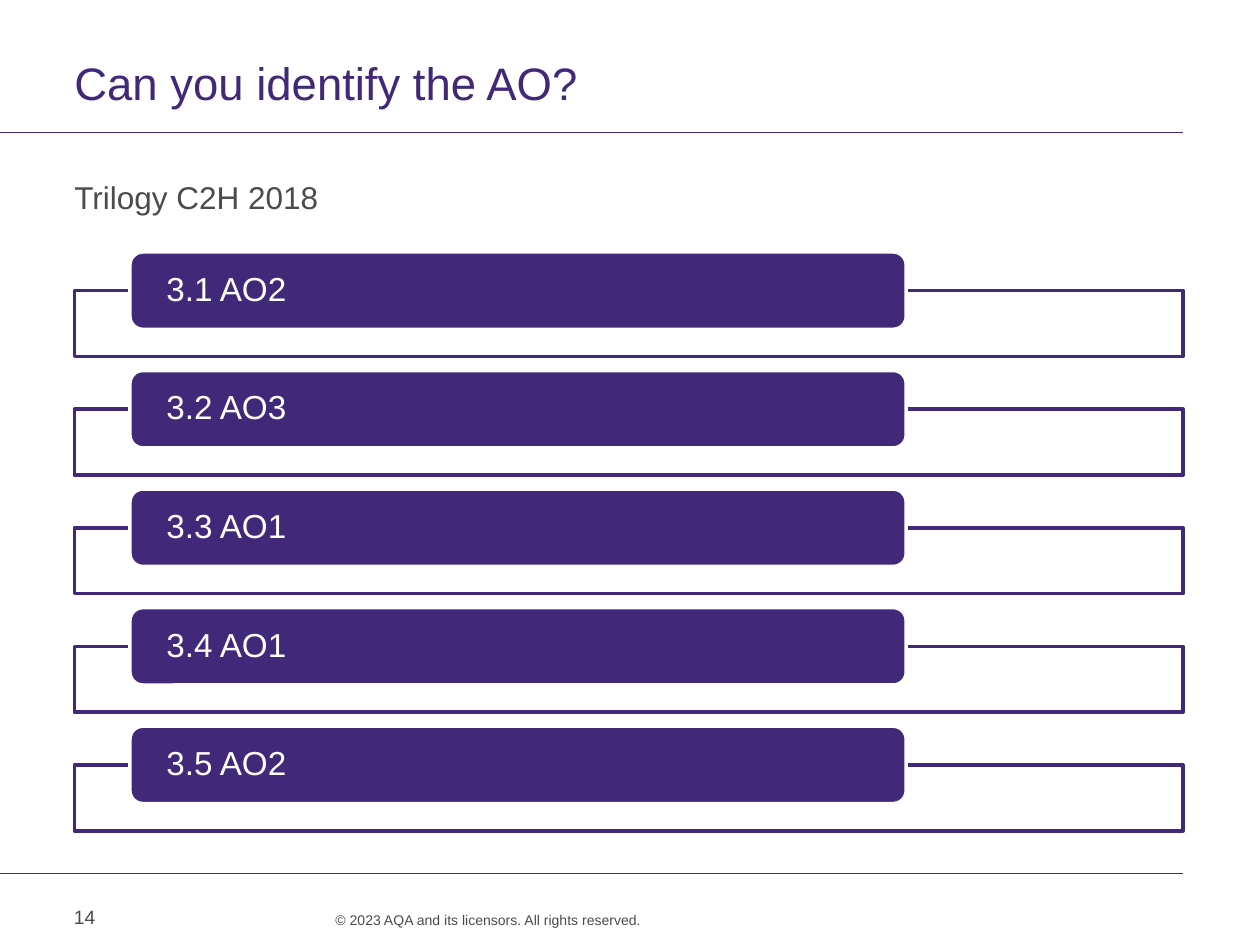
from dataclasses import dataclass

from lxml.etree import SubElement
from pptx import Presentation
from pptx.dml.color import RGBColor
from pptx.enum.shapes import MSO_CONNECTOR, MSO_SHAPE
from pptx.enum.text import MSO_ANCHOR, PP_ALIGN
from pptx.oxml.ns import qn
from pptx.shapes.autoshape import Shape
from pptx.slide import Slide
from pptx.util import Cm, Length, Pt


@dataclass(frozen=True)
class Theme:
    font: str = "Arial"
    purple: RGBColor = RGBColor(0x41, 0x28, 0x78)
    grey: RGBColor = RGBColor(0x4B, 0x4B, 0x4B)
    white: RGBColor = RGBColor(0xFF, 0xFF, 0xFF)
    title: Length = Pt(26)
    answer: Length = Pt(19)
    subtitle: Length = Pt(18)
    number: Length = Pt(11)
    footer: Length = Pt(8)
    rule: Length = Pt(0.6)
    outline: Length = Pt(2)


@dataclass(frozen=True)
class Box:
    left: float
    top: float
    width: float
    height: float

    def lengths(self) -> tuple[Length, ...]:
        return Cm(self.left), Cm(self.top), Cm(self.width), Cm(self.height)


@dataclass(frozen=True)
class Label:
    text: str
    box: Box
    size: Length
    color: RGBColor
    align: PP_ALIGN = PP_ALIGN.LEFT
    anchor: MSO_ANCHOR = MSO_ANCHOR.TOP
    spacing: Length | float | None = None
    inset_x: float = 0
    inset_y: float = 0


THEME = Theme()
LEFT, WIDTH = 1.5, 22.35
RIGHT = LEFT + WIDTH
FIRST_TOP, PITCH = 5.08, 2.39
ANSWERS = ("3.1 AO2", "3.2 AO3", "3.3 AO1", "3.4 AO1", "3.5 AO2")
RULES = (2.67, 17.6)
LABELS = (
    Label("© 2023 AQA and its licensors. All rights reserved.",
          Box(4.24, 18.36, 8.69, 0.66), THEME.footer, THEME.grey,
          align=PP_ALIGN.RIGHT, spacing=Pt(10)),
    Label("Can you identify the AO?", Box(LEFT, 1.22, WIDTH, 1.19),
          THEME.title, THEME.purple, spacing=Pt(28)),
    Label("14", Box(1.24, 17.98, 1.93, 1.02), THEME.number, THEME.grey,
          anchor=MSO_ANCHOR.MIDDLE, inset_x=0.25, inset_y=0.13),
    Label("Trilogy C2H 2018", Box(LEFT, 3.58, 7.62, 0.76),
          THEME.subtitle, THEME.grey),
)


def write(sp: Shape, label: Label) -> None:
    tf = sp.text_frame
    tf.word_wrap = True
    tf.vertical_anchor = label.anchor
    tf.margin_left = tf.margin_right = Cm(label.inset_x)
    tf.margin_top = tf.margin_bottom = Cm(label.inset_y)
    p = tf.paragraphs[0]
    p.text = label.text
    p.alignment = label.align
    p.line_spacing = label.spacing
    p.font.name = THEME.font
    p.font.size = label.size
    p.font.color.rgb = label.color


def add_label(s: Slide, label: Label) -> None:
    write(s.shapes.add_textbox(*label.box.lengths()), label)


def add_rule(s: Slide, y: float) -> None:
    line = s.shapes.add_connector(MSO_CONNECTOR.STRAIGHT, Cm(0), Cm(y), Cm(RIGHT), Cm(y))
    line.line.color.rgb = THEME.purple
    line.line.width = THEME.rule
    SubElement(line._element.spPr, qn("a:effectLst"))


def add_block(s: Slide, kind: MSO_SHAPE, box: Box, fill: RGBColor, line: RGBColor) -> Shape:
    sp = s.shapes.add_shape(kind, *box.lengths())
    sp.shadow.inherit = False
    sp.fill.solid()
    sp.fill.fore_color.rgb = fill
    sp.line.color.rgb = line
    sp.line.width = THEME.outline
    return sp


def add_answer(s: Slide, text: str, top: float) -> None:
    frame = add_block(s, MSO_SHAPE.RECTANGLE, Box(LEFT, top + 0.78, WIDTH, 1.33),
                      THEME.white, THEME.purple)
    color = frame._element.spPr.find(qn("a:solidFill"))[0]
    SubElement(color, qn("a:alpha"), val="90000")
    box = Box(2.62, top, 15.65, 1.56)
    bar = add_block(s, MSO_SHAPE.ROUNDED_RECTANGLE, box, THEME.purple, THEME.white)
    write(bar, Label(text, box, THEME.answer, THEME.white,
                     anchor=MSO_ANCHOR.MIDDLE, spacing=0.9, inset_x=0.66))


def main() -> None:
    prs = Presentation()
    prs.slide_width, prs.slide_height = Cm(25.4), Cm(19.05)
    s = prs.slides.add_slide(prs.slide_layouts[6])
    for y in RULES:
        add_rule(s, y)
    for label in LABELS:
        add_label(s, label)
    for i, text in enumerate(ANSWERS):
        add_answer(s, text, FIRST_TOP + i * PITCH)
    prs.save("out.pptx")


if __name__ == "__main__":
    main()
